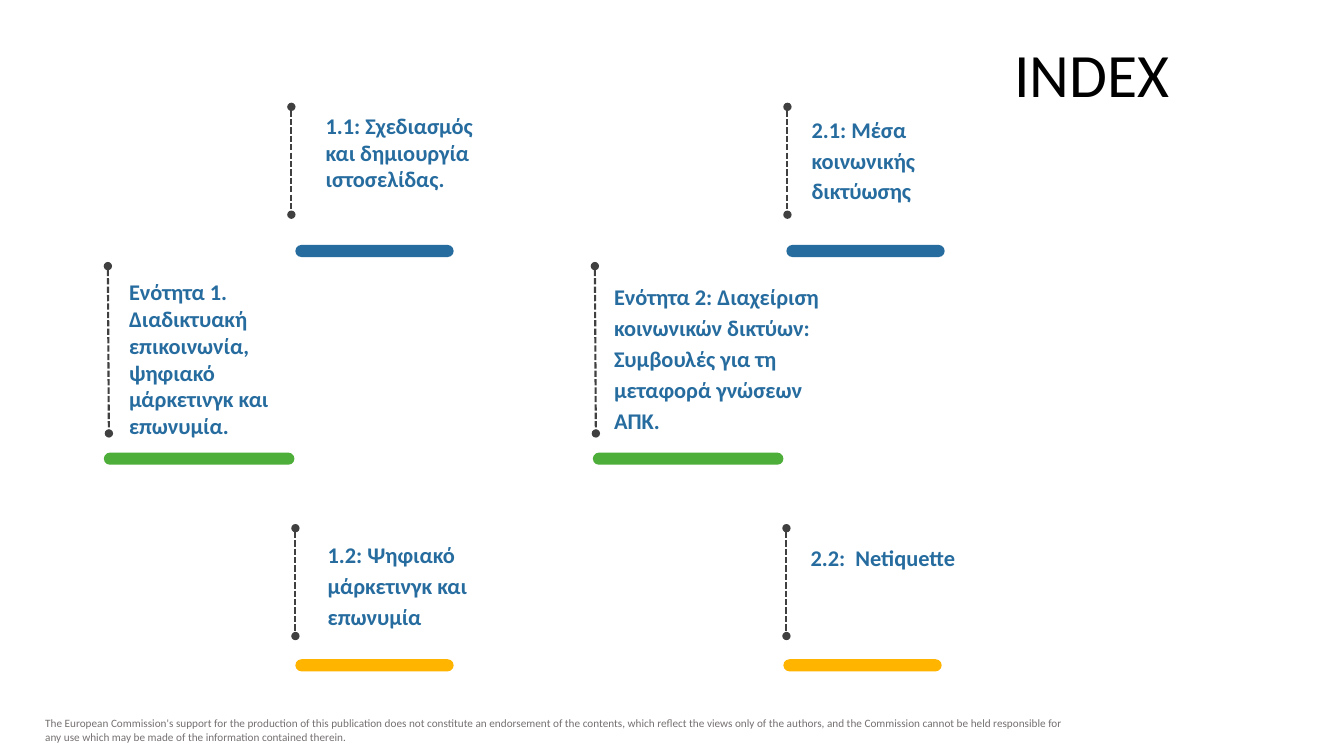
from lxml import etree
from pptx import Presentation
from pptx.dml.color import RGBColor
from pptx.enum.dml import MSO_LINE
from pptx.enum.shapes import MSO_CONNECTOR, MSO_SHAPE
from pptx.enum.text import MSO_ANCHOR, PP_ALIGN
from pptx.oxml.ns import qn
from pptx.util import Inches, Pt

STRAIGHT = MSO_CONNECTOR.STRAIGHT
ROUNDED = MSO_SHAPE.ROUNDED_RECTANGLE
DASH = MSO_LINE.SQUARE_DOT
MIDDLE, TOP = MSO_ANCHOR.MIDDLE, MSO_ANCHOR.TOP
LEFT, RIGHT, JUSTIFY = PP_ALIGN.LEFT, PP_ALIGN.RIGHT, PP_ALIGN.JUSTIFY
BLUE, GREEN, YELLOW = "266C9F", "4EAE3A", "FFB500"


def color(hex_string):
    return RGBColor.from_string(hex_string)


def add_text(box, text, size, hex_string, bold=False, align=LEFT,
             spacing=1.0, side_margin=0.1, anchor=TOP):
    shape = slide.shapes.add_textbox(*[Inches(value) for value in box])
    frame = shape.text_frame
    frame.word_wrap = True
    frame.vertical_anchor = anchor
    frame.margin_left = frame.margin_right = Inches(side_margin)
    paragraph = frame.paragraphs[0]
    paragraph.alignment = align
    paragraph.line_spacing = spacing
    run = paragraph.add_run()
    run.text = text
    run.font.name = "Calibri"
    run.font.size = Pt(size)
    run.font.bold = bold
    run.font.color.rgb = color(hex_string)
    return paragraph


presentation = Presentation()
presentation.slide_width = Inches(13.33)
presentation.slide_height = Inches(7.5)
slide = presentation.slides.add_slide(presentation.slide_layouts[6])

# Disclaimer and title
add_text((0.35, 7.06, 10.46, 0.37),
         "The European Commission's support for the production of this "
         "publication does not constitute an endorsement of the contents, "
         "which reflect the views only of the authors, and the Commission "
         "cannot be held responsible for any use which may be made of the "
         "information contained therein.", 8, "767171")
add_text((3.09, 0.37, 8.61, 0.79), "INDEX", 44, "000000",
         align=RIGHT, spacing=0.9, anchor=MIDDLE)

# Coloured bars: left, top, width, colour
bars = [
    (1.03, 4.49, 1.89, GREEN), (5.88, 4.49, 1.89, GREEN),
    (2.93, 2.43, 1.57, BLUE), (7.8, 2.43, 1.57, BLUE),
    (2.93, 6.54, 1.57, YELLOW), (7.77, 6.54, 1.57, YELLOW),
]
for left, top, width, fill in bars:
    bar = slide.shapes.add_shape(ROUNDED, Inches(left), Inches(top),
                                 Inches(width), Inches(0.12))
    bar.adjustments[0] = 0.5
    bar.shadow.inherit = False
    bar.fill.solid()
    bar.fill.fore_color.rgb = color(fill)
    bar.line.fill.background()

# Dashed lines with round ends: start x, end x, top, bottom
dashed_lines = [
    (1.07, 1.08, 2.64, 4.3), (5.9, 5.91, 2.64, 4.3),
    (2.89, 2.89, 1.06, 2.13), (7.81, 7.81, 1.06, 2.13),
    (2.93, 2.93, 5.24, 6.31), (7.8, 7.8, 5.24, 6.31),
]
for start_x, end_x, top, bottom in dashed_lines:
    connector = slide.shapes.add_connector(
        STRAIGHT, Inches(start_x), Inches(top), Inches(end_x), Inches(bottom))
    connector.line.color.rgb = color("404040")
    connector.line.width = Pt(1.5)
    connector.line.dash_style = DASH
    line_xml = connector.line._get_or_add_ln()
    for end in ("a:headEnd", "a:tailEnd"):
        etree.SubElement(line_xml, qn(end), type="oval")
    etree.SubElement(connector._element.spPr, qn("a:effectLst"))

# Units and topics: box, line spacing, alignment, indent, text
entries = [
    ((1.16, 2.71, 2.12, 1.72), 1.0, LEFT, 0,
     "Ενότητα 1. Διαδικτυακή επικοινωνία, ψηφιακό μάρκετινγκ και επωνυμία."),
    ((3.11, 1.06, 1.73, 0.91), 1.0, LEFT, 0,
     "1.1: Σχεδιασμός και δημιουργία ιστοσελίδας."),
    ((3.13, 5.28, 1.73, 1.03), 1.15, LEFT, 0,
     "1.2: Ψηφιακό μάρκετινγκ και επωνυμία"),
    ((5.72, 2.72, 2.63, 1.65), 1.15, LEFT, 0.25,
     "Ενότητα 2: Διαχείριση κοινωνικών δικτύων: "
     "Συμβουλές για τη μεταφορά γνώσεων ΑΠΚ."),
    ((7.93, 1.06, 1.73, 1.01), 1.15, LEFT, 0,
     "2.1: Μέσα κοινωνικής δικτύωσης"),
    ((7.92, 5.31, 1.73, 0.39), 1.15, JUSTIFY, 0, "2.2:  Netiquette"),
]
for box, spacing, align, indent, text in entries:
    paragraph = add_text(box, text, 16, BLUE, bold=True, align=align,
                         spacing=spacing, side_margin=0.12)
    paragraph._p.get_or_add_pPr().set("marL", str(Inches(indent)))

presentation.save("out.pptx")
